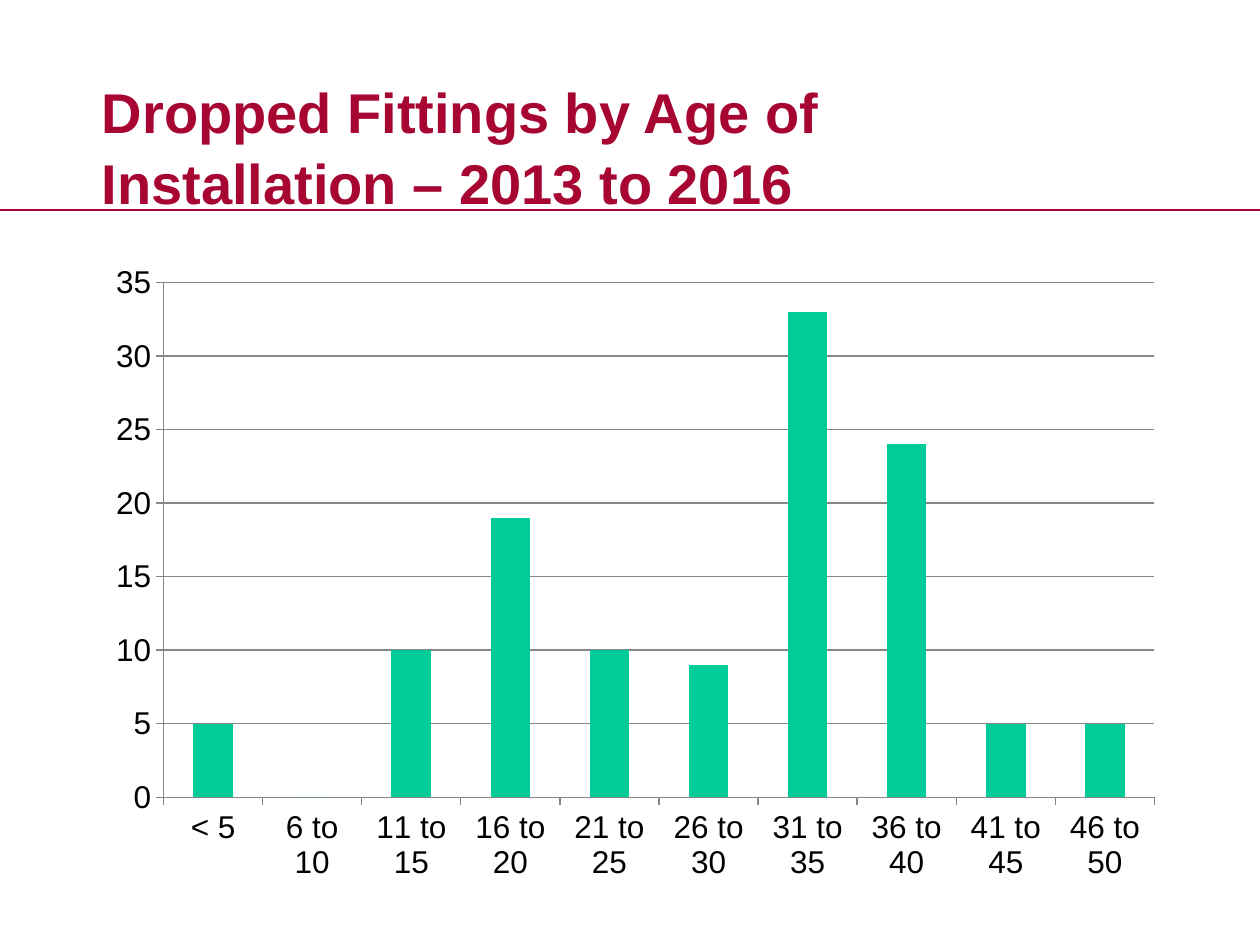
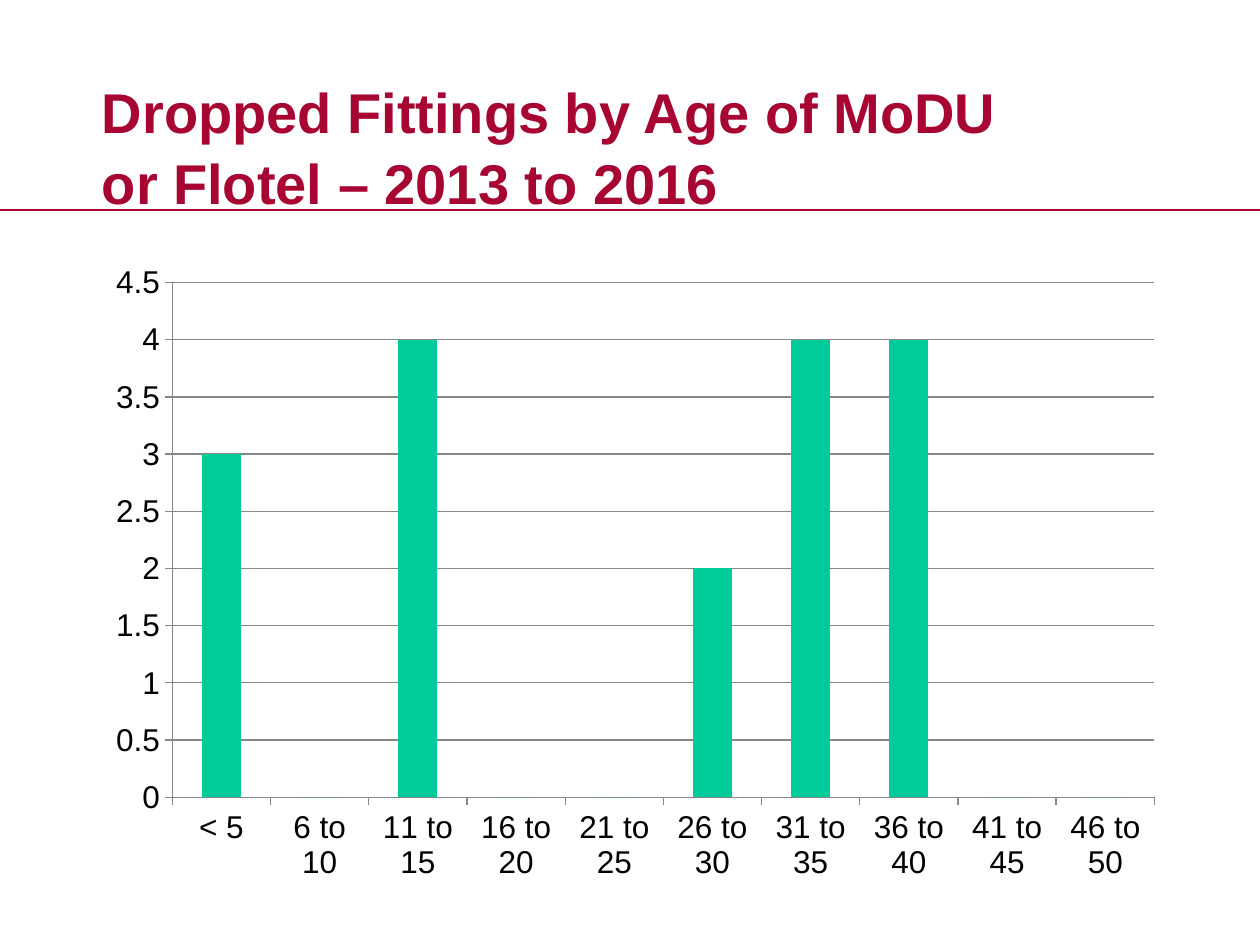
"""Build two slides charting dropped fittings by age."""
from lxml.etree import SubElement
from pptx import Presentation
from pptx.chart.data import CategoryChartData as ChartData
from pptx.dml.color import RGBColor
from pptx.enum.chart import XL_CHART_TYPE as ChartType, XL_TICK_MARK as TickMark
from pptx.enum.shapes import MSO_CONNECTOR as Connector
from pptx.enum.text import MSO_ANCHOR as Anchor, PP_ALIGN as Align
from pptx.oxml.ns import qn
from pptx.util import Pt

CRIMSON = RGBColor(0xA7, 0x05, 0x32)
GREEN = RGBColor(0x00, 0xCC, 0x99)
GREY = RGBColor(0x87, 0x87, 0x87)
BLACK = RGBColor(0x00, 0x00, 0x00)
FONT = "Arial"
SLIDE_WIDTH, SLIDE_HEIGHT = Pt(720), Pt(540)
RULE_TOP = Pt(120)
AGE_BANDS = ["< 5"] + [f"{start} to {start + 4}" for start in range(6, 47, 5)]


def style_font(font, size, color, bold=False):
    """Set the face, size, colour and weight of a font."""
    font.name, font.size, font.bold = FONT, Pt(size), bold
    font.color.rgb = color


def add_rule(page):
    """Draw the line across the page below the title."""
    rule = page.shapes.add_connector(
        Connector.STRAIGHT, 0, RULE_TOP, SLIDE_WIDTH, RULE_TOP)
    rule.line.color.rgb = CRIMSON
    rule.line.width = Pt(1.25)
    SubElement(rule.element.spPr, qn("a:effectLst"))


def set_title(page, text):
    """Place and format the title of the page."""
    box = page.shapes.title
    box.left, box.top, box.width, box.height = Pt(51), Pt(47.5), Pt(538), Pt(67)
    frame = box.text_frame
    frame.word_wrap = True
    frame.vertical_anchor = Anchor.MIDDLE
    frame.margin_top = Pt(7)
    para = frame.paragraphs[0]
    para.alignment = Align.LEFT
    para.line_spacing = 1.06
    span = para.add_run()
    span.text = text
    style_font(span.font, 32, CRIMSON, bold=True)


def style_axis(axis):
    """Give an axis a grey line with outward ticks."""
    axis.format.line.color.rgb = GREY
    axis.format.line.width = Pt(0.75)
    axis.major_tick_mark = TickMark.OUTSIDE
    axis.minor_tick_mark = TickMark.NONE


def add_age_chart(page, counts, top_value, step):
    """Add the column chart of fittings in each age band."""
    data = ChartData()
    data.categories = AGE_BANDS
    data.add_series("Series 1", counts)
    chart = page.shapes.add_chart(
        ChartType.COLUMN_CLUSTERED, Pt(54), Pt(144), Pt(618), Pt(366.5), data).chart
    chart.has_legend = False
    chart.has_title = False
    style_font(chart.font, 18, BLACK)
    plot = chart.plots[0]
    plot.gap_width = 150
    plot.vary_by_categories = False
    fill = plot.series[0].format.fill
    fill.solid()
    fill.fore_color.rgb = GREEN
    style_axis(chart.category_axis)
    values = chart.value_axis
    style_axis(values)
    values.minimum_scale, values.maximum_scale = 0, top_value
    values.major_unit = step
    values.has_major_gridlines = True
    values.major_gridlines.format.line.color.rgb = GREY
    values.major_gridlines.format.line.width = Pt(0.75)


def add_page(deck, title, counts, top_value, step):
    """Add a page with a title, a rule and a chart."""
    page = deck.slides.add_slide(deck.slide_layouts.get_by_name("Title Only"))
    add_rule(page)
    set_title(page, title)
    add_age_chart(page, counts, top_value, step)


def main():
    """Build and save the deck."""
    deck = Presentation()
    deck.slide_width, deck.slide_height = SLIDE_WIDTH, SLIDE_HEIGHT
    add_page(deck, "Dropped Fittings by Age of Installation – 2013 to 2016",
             [5, 0, 10, 19, 10, 9, 33, 24, 5, 5], 35, 5)
    add_page(deck, "Dropped Fittings by Age of MoDU or Flotel – 2013 to 2016",
             [3, 0, 4, 0, 0, 2, 4, 4, 0, 0], 4.5, 0.5)
    deck.save("out.pptx")


if __name__ == "__main__":
    main()
